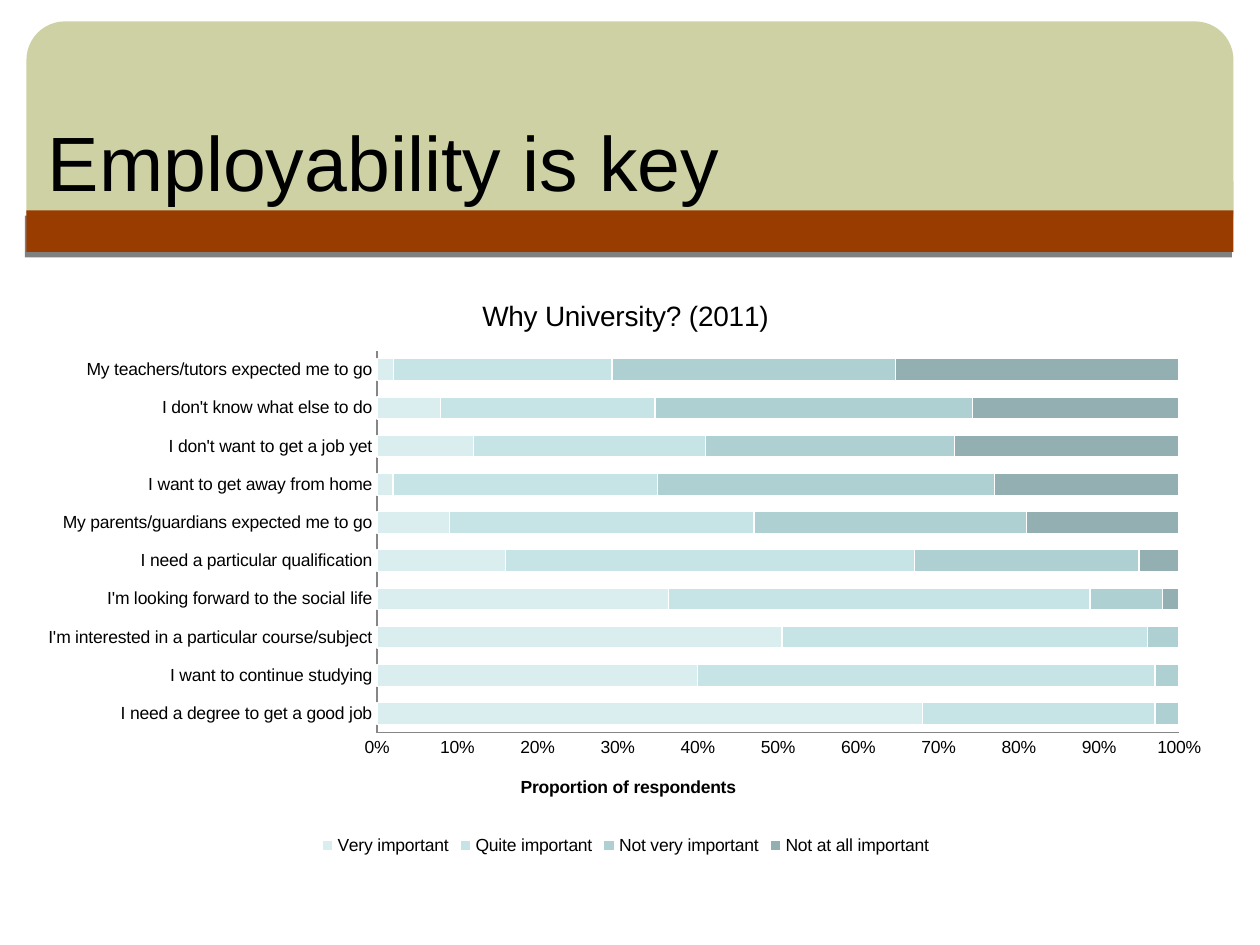
import pptx
import pptx.util
import pptx.chart.data
import pptx.dml.color
import pptx.enum.chart
import pptx.enum.shapes
import pptx.enum.text
import pptx.oxml
import pptx.oxml.ns

Inches, Pt = pptx.util.Inches, pptx.util.Pt
RGBColor = pptx.dml.color.RGBColor
qn, nsdecls = pptx.oxml.ns.qn, pptx.oxml.ns.nsdecls

BLACK = RGBColor(0x00, 0x00, 0x00)
WHITE = RGBColor(0xFF, 0xFF, 0xFF)
OLIVE = RGBColor(0xCE, 0xD1, 0xA4)
RUST = RGBColor(0x99, 0x3C, 0x00)
GREY = RGBColor(0x86, 0x86, 0x86)
TEALS = [
    RGBColor(0xDA, 0xED, 0xEF),
    RGBColor(0xC6, 0xE3, 0xE6),
    RGBColor(0xAF, 0xD0, 0xD3),
    RGBColor(0x93, 0xAF, 0xB2),
]


def add_band(kind, top, height, color):
    sp = s.shapes.add_shape(kind, Inches(0.21), Inches(top), Inches(9.58), Inches(height))
    sp.shadow.inherit = False
    sp.fill.solid()
    sp.fill.fore_color.rgb = color
    sp.line.fill.background()
    return sp


def set_layout(parent, index, target="", **sizes):
    for old in parent.findall(qn("c:layout")):
        parent.remove(old)
    modes = "".join(f'<c:{k}Mode val="edge"/>' for k in sizes if k in "xy")
    values = "".join(f'<c:{k} val="{v}"/>' for k, v in sizes.items())
    parent.insert(index, pptx.oxml.parse_xml(
        f'<c:layout {nsdecls("c")}><c:manualLayout>{target}{modes}{values}'
        "</c:manualLayout></c:layout>"))


prs = pptx.Presentation()
prs.slide_width, prs.slide_height = Inches(10), Inches(7.5)
s = prs.slides.add_slide(prs.slide_layouts[5])

header = add_band(pptx.enum.shapes.MSO_SHAPE.ROUNDED_RECTANGLE, 0.17, 1.83, OLIVE)
header.adjustments[0] = 0.167
stripe = add_band(pptx.enum.shapes.MSO_SHAPE.RECTANGLE, 1.67, 0.33, RUST)
effects = stripe.element.spPr.find(qn("a:effectLst"))
effects.append(pptx.oxml.parse_xml(
    f'<a:outerShdw {nsdecls("a")} dist="{Pt(3.2)}" dir="{106 * 60000}" algn="ctr" '
    'rotWithShape="0"><a:srgbClr val="808080"/></a:outerShdw>'))

title = s.shapes.title
title.left, title.top = Inches(0.28), Inches(0.76)
title.width, title.height = Inches(9.37), Inches(1.03)
s.shapes._spTree.append(title.element)
tf = title.text_frame
tf.text = "Employability is key"
tf.word_wrap = True
tf.vertical_anchor = pptx.enum.text.MSO_ANCHOR.MIDDLE
p = tf.paragraphs[0]
p.alignment = pptx.enum.text.PP_ALIGN.LEFT
r = p.runs[0]
r.font.name, r.font.size = "Arial", Pt(44)
r.font.color.rgb = BLACK

data = pptx.chart.data.CategoryChartData()
data.categories = [
    "I need a degree to get a good job",
    "I want to continue studying",
    "I'm interested in a particular course/subject",
    "I'm looking forward to the social life",
    "I need a particular qualification",
    "My parents/guardians expected me to go",
    "I want to get away from home",
    "I don't want to get a job yet",
    "I don't know what else to do",
    "My teachers/tutors expected me to go",
]
data.add_series("Very important", [68, 40, 51, 36, 16, 9, 2, 12, 8, 2])
data.add_series("Quite important", [29, 57, 46, 52, 51, 38, 33, 29, 27, 27])
data.add_series("Not very important", [3, 3, 4, 9, 28, 34, 42, 31, 40, 35])
data.add_series("Not at all important", [0, 0, 0, 2, 5, 19, 23, 28, 26, 35])
chart = s.shapes.add_chart(
    pptx.enum.chart.XL_CHART_TYPE.BAR_STACKED_100,
    Inches(0.2), Inches(2.18), Inches(9.53), Inches(4.65), data).chart
chart.font.name, chart.font.size = "Arial", Pt(10)
chart.font.color.rgb = BLACK

plot = chart.plots[0]
plot.gap_width, plot.overlap = 75, 100
plot.vary_by_categories = False
for series, color in zip(plot.series, TEALS):
    series.format.fill.solid()
    series.format.fill.fore_color.rgb = color
    series.format.line.color.rgb = WHITE
    series.format.line.width = Pt(0.75)

for axis in (chart.category_axis, chart.value_axis):
    axis.major_tick_mark = axis.minor_tick_mark = pptx.enum.chart.XL_TICK_MARK.NONE
    axis.has_major_gridlines = False
    axis.format.line.color.rgb = GREY
    axis.format.line.width = Pt(0.75)
value_axis = chart.value_axis
value_axis.minimum_scale, value_axis.maximum_scale = 0, 1
value_axis.major_unit = 0.1
value_axis.tick_labels.number_format = "0%"
value_axis.tick_labels.number_format_is_linked = False

for owner, text, size, bold in (
    (chart, "Why University? (2011)", 16, False),
    (value_axis, "Proportion of respondents", 10, True),
):
    owner.has_title = True
    tf = owner.chart_title.text_frame if owner is chart else owner.axis_title.text_frame
    tf.text = text
    r = tf.paragraphs[0].runs[0]
    r.font.name, r.font.size, r.font.bold = "Arial", Pt(size), bold
    r.font.color.rgb = BLACK

chart.has_legend = True
chart.legend.position = pptx.enum.chart.XL_LEGEND_POSITION.BOTTOM
chart.legend.include_in_layout = False

plot_area = chart._chartSpace.chart.plotArea
set_layout(plot_area, 0, '<c:layoutTarget val="inner"/>', x=0.293, y=0.13, w=0.668, h=0.652)
set_layout(value_axis.axis_title._element, 1, x=0.41, y=0.85)

prs.save("out.pptx")
